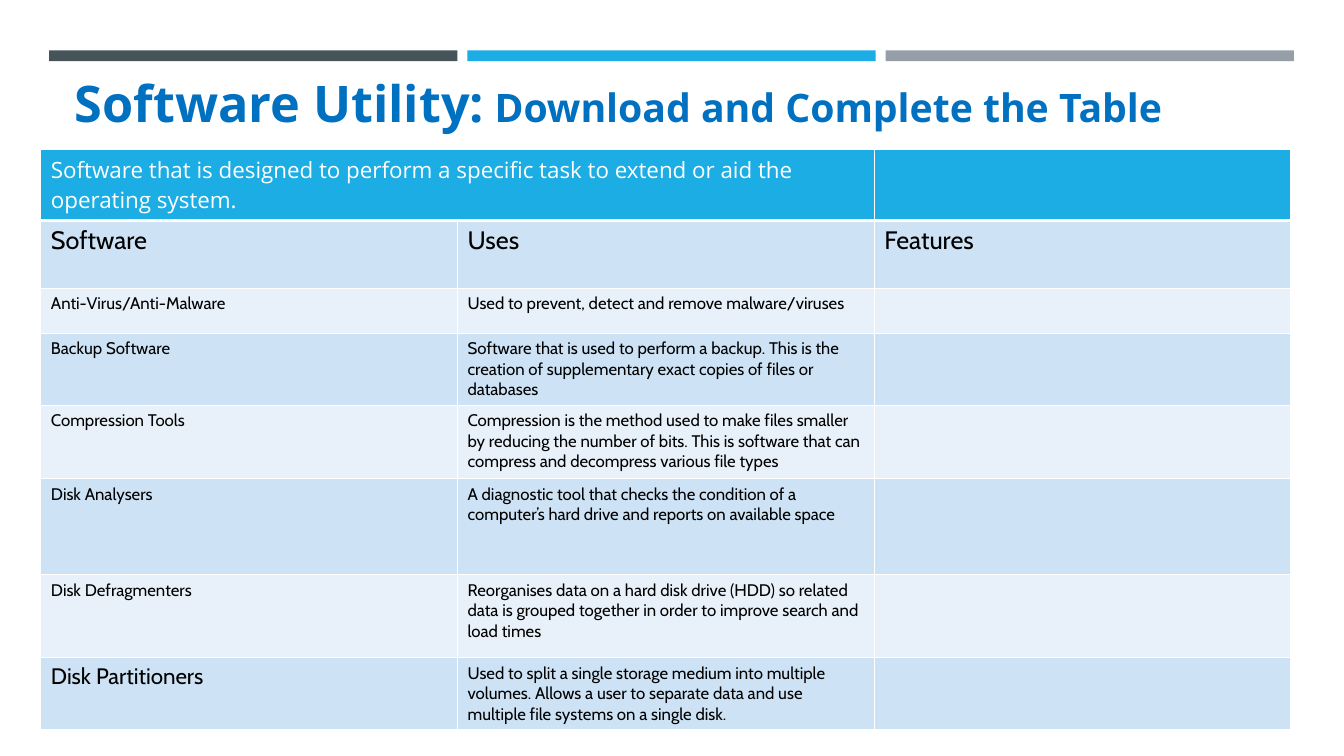
from lxml import etree
from pptx import Presentation
from pptx.dml.color import RGBColor
from pptx.enum import shapes, text
from pptx.oxml import ns
from pptx.util import Cm, Pt

WHITE = RGBColor(0xFF, 0xFF, 0xFF)
BLACK = RGBColor(0x00, 0x00, 0x00)
SLATE = RGBColor(0x46, 0x53, 0x59)
SKY = RGBColor(0x1C, 0xAD, 0xE4)
GREY = RGBColor(0x96, 0x9F, 0xA7)
TITLE_BLUE = RGBColor(0x00, 0x70, 0xC0)
DARK_BAND = RGBColor(0xCD, 0xE3, 0xF5)
LIGHT_BAND = RGBColor(0xE8, 0xF1, 0xFA)

DEFINITION = ("Software that is designed to perform a specific task "
              "to extend or aid the operating system.")
# Software, uses, row height in cm, size of the software name
UTILITIES = [
    ("Anti-Virus/Anti-Malware",
     "Used to prevent, detect and remove malware/viruses", 1.14, 12),
    ("Backup Software",
     "Software that is used to perform a backup. This is the creation of "
     "supplementary exact copies of files or databases", 1.8, 12),
    ("Compression Tools",
     "Compression is the method used to make files smaller by reducing the "
     "number of bits. This is software that can compress and decompress "
     "various file types", 1.85, 12),
    ("Disk Analysers",
     "A diagnostic tool that checks the condition of a computer’s hard drive "
     "and reports on available space", 2.42, 12),
    ("Disk Defragmenters",
     "Reorganises data on a hard disk drive (HDD) so related data is grouped "
     "together in order to improve search and load times", 2.09, 12),
    ("Disk Partitioners",
     "Used to split a single storage medium into multiple volumes. Allows a "
     "user to separate data and use multiple file systems on a single disk.",
     1.78, 16),
]


def add_border(cell, side, points):
    line = etree.SubElement(cell._tc.get_or_add_tcPr(), ns.qn(f"a:ln{side}"),
                            w=str(Pt(points)))
    solid = etree.SubElement(line, ns.qn("a:solidFill"))
    etree.SubElement(solid, ns.qn("a:srgbClr"), val=str(WHITE))


def write_cell(cell, words, size, font_name, color):
    cell.text = words
    font = cell.text_frame.paragraphs[0].font
    font.size, font.name, font.color.rgb = Pt(size), font_name, color


deck = Presentation()
deck.slide_width, deck.slide_height = Cm(33.87), Cm(19.05)
slide = deck.slides.add_slide(deck.slide_layouts[5])

# Three bars along the top
for i, color in enumerate([SLATE, SKY, GREY]):
    bar = slide.shapes.add_shape(shapes.MSO_SHAPE.RECTANGLE, Cm(1.24 + 10.54 * i),
                                 Cm(1.27), Cm(10.29), Cm(0.27))
    bar.shadow.inherit = False
    bar.fill.solid()
    bar.fill.fore_color.rgb = color
    bar.line.fill.background()

# Title
title = slide.shapes.title
title.left, title.top, title.width, title.height = Cm(1.63), Cm(0.74), Cm(30.63), Cm(2.74)
title.text_frame.vertical_anchor = text.MSO_ANCHOR.BOTTOM
title.text_frame.auto_size = text.MSO_AUTO_SIZE.NONE
heading = title.text_frame.paragraphs[0]
heading.alignment = text.PP_ALIGN.LEFT
heading.font.name, heading.font.bold = "Open Sans", True
heading.font.color.rgb = TITLE_BLUE
for words, size in [("Software Utility:", 36), (" Download and Complete the Table", 28)]:
    run = heading.add_run()
    run.text, run.font.size = words, Pt(size)

# Table frame
heights = [1.78, 1.71] + [utility[2] for utility in UTILITIES]
table = slide.shapes.add_table(len(heights), 3, Cm(1.03), Cm(3.77),
                               Cm(31.5), Cm(sum(heights))).table
for column in table.columns:
    column.width = Cm(10.5)

# Row heights, bands and borders
for r, height in enumerate(heights):
    table.rows[r].height = Cm(height)
    for cell in table.rows[r].cells:
        for side in "LRTB":
            heavy = (r, side) in [(0, "B"), (1, "T")]
            add_border(cell, side, 3 if heavy else 1)
        cell.fill.solid()
        cell.fill.fore_color.rgb = SKY if r == 0 else DARK_BAND if r % 2 else LIGHT_BAND

# Definition and column headings
table.cell(0, 0).merge(table.cell(0, 1))
write_cell(table.cell(0, 0), DEFINITION, 16, "Open Sans", WHITE)
for c, words in enumerate(["Software", "Uses", "Features"]):
    write_cell(table.cell(1, c), words, 18, "Cabin", BLACK)

# Utilities
for r, (software, uses, _, size) in enumerate(UTILITIES, start=2):
    write_cell(table.cell(r, 0), software, size, "Cabin", BLACK)
    write_cell(table.cell(r, 1), uses, 12, "Cabin", BLACK)

deck.save("out.pptx")
